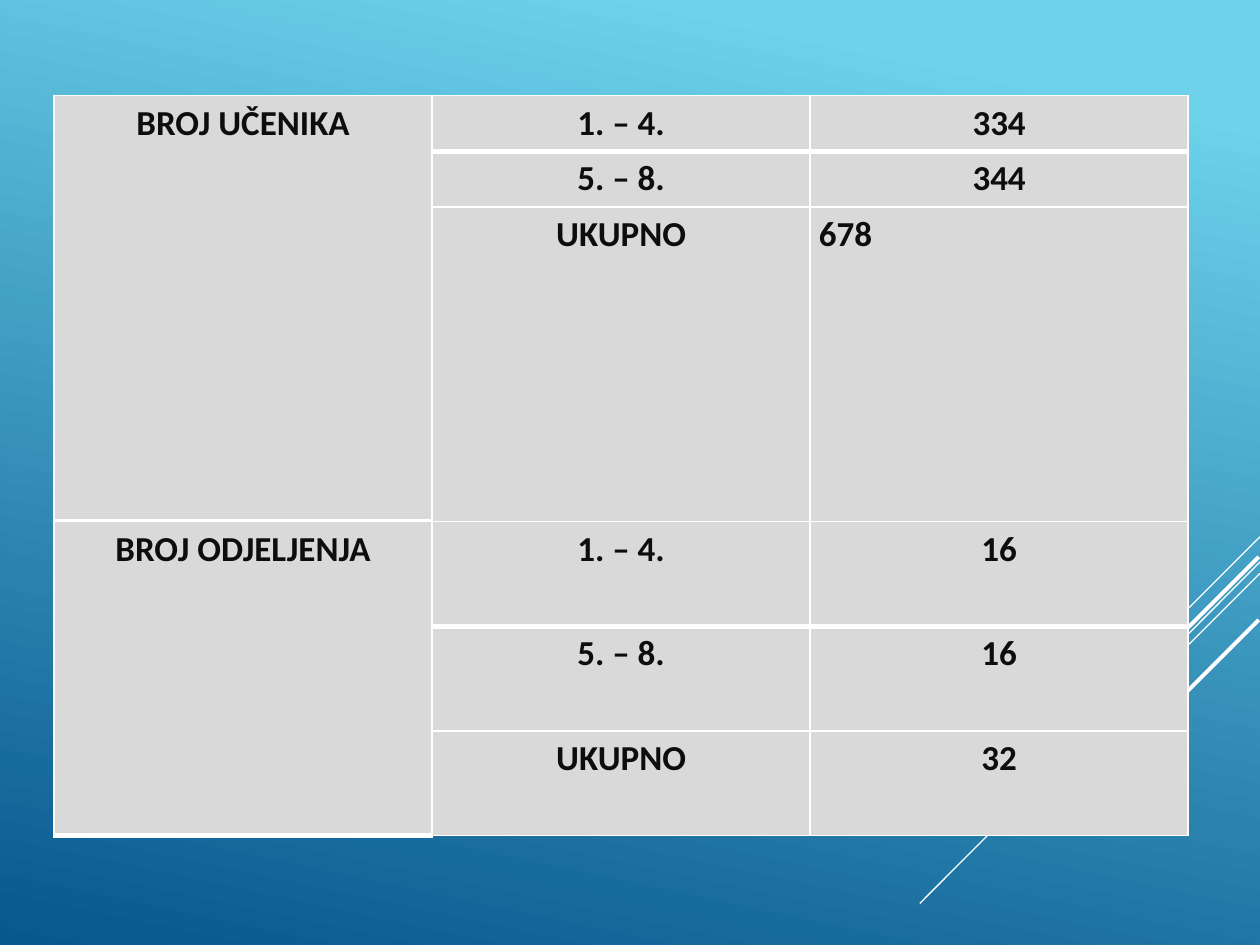
from lxml.etree import SubElement
from pptx import Presentation
from pptx.dml.color import RGBColor
from pptx.enum.shapes import MSO_CONNECTOR
from pptx.enum.text import PP_ALIGN
from pptx.oxml.ns import qn
from pptx.util import Inches, Pt

COLORS = {
    "sky": "6ED2EB",
    "deep": "06588E",
    "white": "FFFFFF",
    "cell": "D9D9D9",
    "text": "0D0D0D",
}
THIN, THICK = 0.96, 3
LEFT, COLUMN_WIDTH = 0.43, 3

# Start x, start y, end x, end y, width in points
STREAKS = [
    (10, 4.26, 9.17, 5.09, 0.75),
    (10, 4.46, 7.3, 7.17, 0.75),
    (10, 4.55, 8.28, 6.27, 0.75),
    (9.99, 4.42, 8.42, 5.99, 2.25),
    (9.99, 4.92, 8.85, 6.06, 2.25),
]
ROW_LABELS = ["1. – 4.", "5. – 8.", "UKUPNO"]


def color(name):
    return RGBColor.from_string(COLORS[name])


def set_background(slide):
    fill = slide.background.fill
    fill.gradient()
    fill.gradient_angle = 258
    for stop, (position, name) in zip(fill.gradient_stops, [(0.1, "sky"), (1, "deep")]):
        stop.position = position
        stop.color.rgb = color(name)


def add_streak(slide, x1, y1, x2, y2, width):
    line = slide.shapes.add_connector(
        MSO_CONNECTOR.STRAIGHT, Inches(x1), Inches(y1), Inches(x2), Inches(y2))
    line.line.color.rgb = color("white")
    line.line.width = Pt(width)
    SubElement(line._element.spPr, qn("a:effectLst"))


def set_borders(cell, top, bottom):
    properties = cell._tc.get_or_add_tcPr()
    for side, width in [("L", THIN), ("R", THIN), ("T", top), ("B", bottom)]:
        border = SubElement(properties, qn(f"a:ln{side}"), w=str(Pt(width)))
        fill = SubElement(border, qn("a:solidFill"))
        SubElement(fill, qn("a:srgbClr"), val=COLORS["white"])


def format_cell(cell, text, row, alignment=PP_ALIGN.CENTER):
    # The first row is closed by a thick rule
    set_borders(cell, THICK if row == 1 else THIN, THICK if row == 0 else THIN)
    cell.fill.solid()
    cell.fill.fore_color.rgb = color("cell")
    cell.margin_left = cell.margin_right = Inches(0.07)
    cell.margin_top = cell.margin_bottom = Inches(0.05)
    cell.text_frame.text = text
    paragraph = cell.text_frame.paragraphs[0]
    paragraph.alignment = alignment
    font = paragraph.runs[0].font
    font.name, font.size, font.bold = "Calibri", Pt(20), True
    font.color.rgb = color("text")


def add_count_table(slide, top, heights, title, counts, total_alignment):
    table = slide.shapes.add_table(
        3, 3, Inches(LEFT), Inches(top),
        Inches(3 * COLUMN_WIDTH), Inches(sum(heights))).table
    table.first_row = table.horz_banding = False
    for column in table.columns:
        column.width = Inches(COLUMN_WIDTH)
    table.cell(0, 0).merge(table.cell(2, 0))
    format_cell(table.cell(0, 0), title, 0)
    for row, (height, label, count) in enumerate(zip(heights, ROW_LABELS, counts)):
        table.rows[row].height = Inches(height)
        format_cell(table.cell(row, 1), label, row)
        alignment = total_alignment if row == 2 else PP_ALIGN.CENTER
        format_cell(table.cell(row, 2), count, row, alignment)


def main():
    presentation = Presentation()
    presentation.slide_width, presentation.slide_height = Inches(10), Inches(7.5)
    slide = presentation.slides.add_slide(presentation.slide_layouts[6])

    # Backdrop
    set_background(slide)
    for streak in STREAKS:
        add_streak(slide, *streak)

    # Pupils and classes
    add_count_table(slide, 0.76, [0.44, 0.44, 2.5], "BROJ UČENIKA",
                    ["334", "344", "678"], PP_ALIGN.LEFT)
    add_count_table(slide, 4.14, [0.83] * 3, "BROJ ODJELJENJA",
                    ["16", "16", "32"], PP_ALIGN.CENTER)

    presentation.save("out.pptx")


if __name__ == "__main__":
    main()
